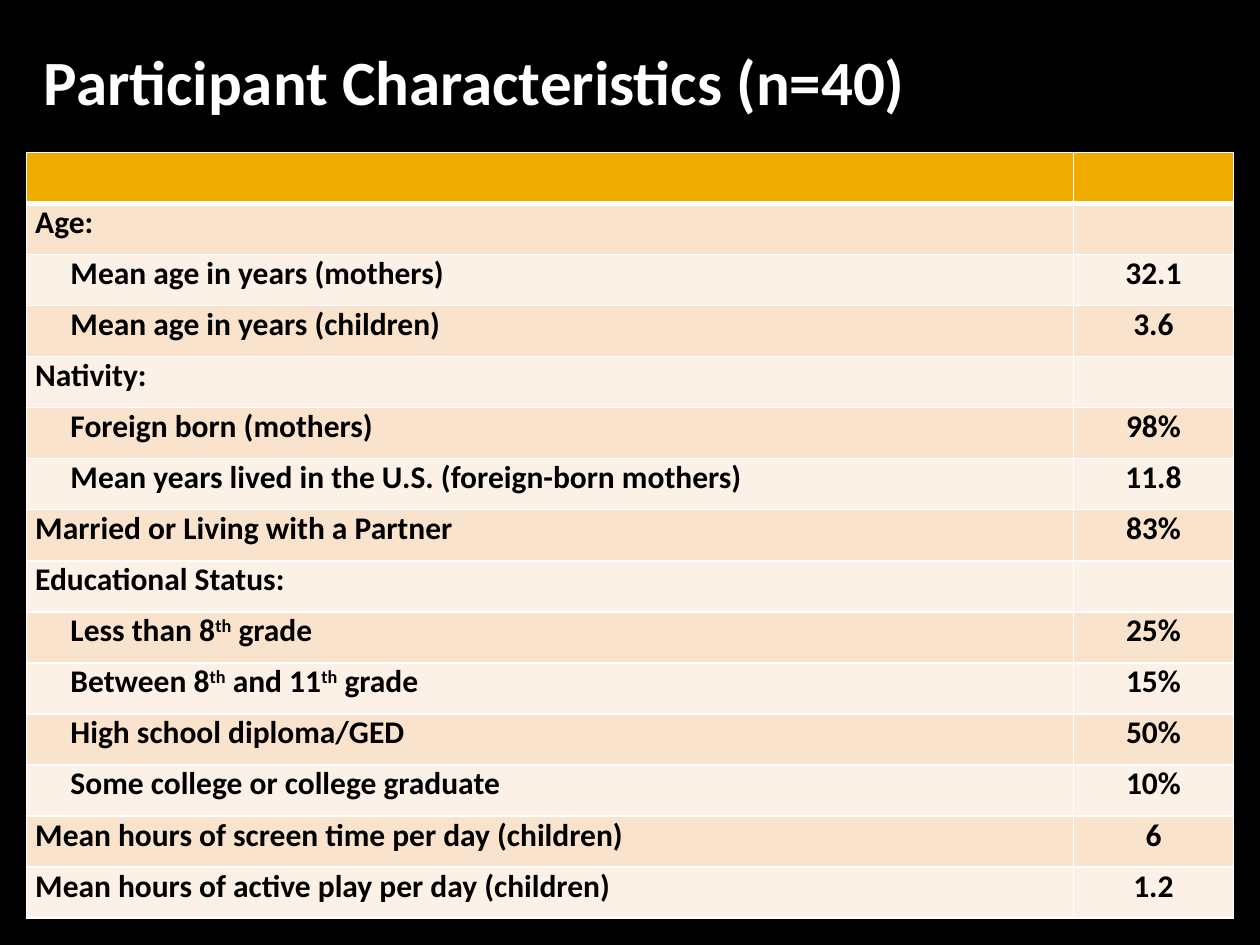
from lxml.etree import SubElement as Sub
from pptx import Presentation
from pptx.dml.color import RGBColor
from pptx.enum.text import MSO_ANCHOR as Anchor, PP_ALIGN as Align
from pptx.oxml.ns import qn
from pptx.util import Inches, Pt

ROWS = [
    (0, "", ""),
    (0, "Age:", ""),
    (1, "Mean age in years (mothers)", "32.1"),
    (1, "Mean age in years (children)", "3.6"),
    (0, "Nativity:", ""),
    (1, "Foreign born (mothers)", "98%"),
    (1, "Mean years lived in the U.S. (foreign-born mothers)", "11.8"),
    (0, "Married or Living with a Partner", "83%"),
    (0, "Educational Status:", ""),
    (1, "Less than 8^th^ grade", "25%"),
    (1, "Between 8^th^ and 11^th^ grade", "15%"),
    (1, "High school diploma/GED", "50%"),
    (1, "Some college or college graduate", "10%"),
    (0, "Mean hours of screen time per day (children)", "6"),
    (0, "Mean hours of active play per day (children)", "1.2"),
]


def color(code):
    return RGBColor.from_string(code)


class Deck:
    """Hold the style and the current slide, and draw each kind of element."""

    font = "Calibri"
    white, black = "FFFFFF", "000000"
    head, bands = "F0AD00", ("FCF1E7", "F9E3CC")

    def __init__(self):
        self.show = Presentation()
        self.show.slide_width, self.show.slide_height = Inches(10), Inches(7.5)
        self.slide = self.show.slides.add_slide(self.show.slide_layouts[6])
        back = self.slide.background.fill
        back.solid()
        back.fore_color.rgb = color(self.black)

    def words(self, para, text, size, ink):
        para.font.size = Pt(size)
        for i, part in enumerate(text.split("^")):
            if not part:
                continue
            run = para.add_run()
            run.text = part
            run.font.name, run.font.size, run.font.bold = self.font, Pt(size), True
            run.font.color.rgb = color(ink)
            if i % 2:
                run._r.get_or_add_rPr().set("baseline", "30000")

    def title(self, text, left, top, width, height):
        box = self.slide.shapes.add_textbox(*map(Inches, (left, top, width, height)))
        frame = box.text_frame
        frame.word_wrap = True
        frame.vertical_anchor = Anchor.MIDDLE
        frame.margin_right = frame.margin_top = frame.margin_bottom = Inches(0.05)
        self.words(frame.paragraphs[0], text, 36, self.white)

    def edge(self, cell, sides):
        props = cell._tc.get_or_add_tcPr()
        for side, width in sides.items():
            line = Sub(props, qn(f"a:ln{side}"), w=str(Pt(width)))
            fill = Sub(line, qn("a:solidFill"))
            Sub(fill, qn("a:srgbClr"), val=self.white)

    def cell(self, cell, text, row, step, align):
        cell.margin_left = cell.margin_right = Inches(0.07)
        cell.margin_top = cell.margin_bottom = 0
        self.edge(cell, {"L": 1, "R": 1, "T": 3 if row == 1 else 1, "B": 1 if row else 3})
        cell.fill.solid()
        cell.fill.fore_color.rgb = color(self.bands[row % 2] if row else self.head)
        para = cell.text_frame.paragraphs[0]
        para.alignment = align
        para.space_before = para.space_after = Pt(2)
        if step:
            para._p.get_or_add_pPr().set("marL", str(Inches(0.28)))
        self.words(para, text, 18, self.black)

    def table(self, rows, left, top, widths, height):
        size = map(Inches, (left, top, sum(widths), height))
        grid = self.slide.shapes.add_table(len(rows), len(widths), *size).table
        for col, width in zip(grid.columns, widths):
            col.width = Inches(width)
        for i, (step, label, value) in enumerate(rows):
            grid.rows[i].height = Inches(height / len(rows))
            self.cell(grid.cell(i, 0), label, i, step, Align.LEFT)
            self.cell(grid.cell(i, 1), value, i, 0, Align.CENTER)


def main():
    deck = Deck()
    deck.title("Participant Characteristics (n=40)", 0.25, 0.25, 9.17, 0.78)
    deck.table(ROWS, 0.21, 1.21, (8.31, 1.27), 6.08)
    deck.show.save("out.pptx")


if __name__ == "__main__":
    main()
